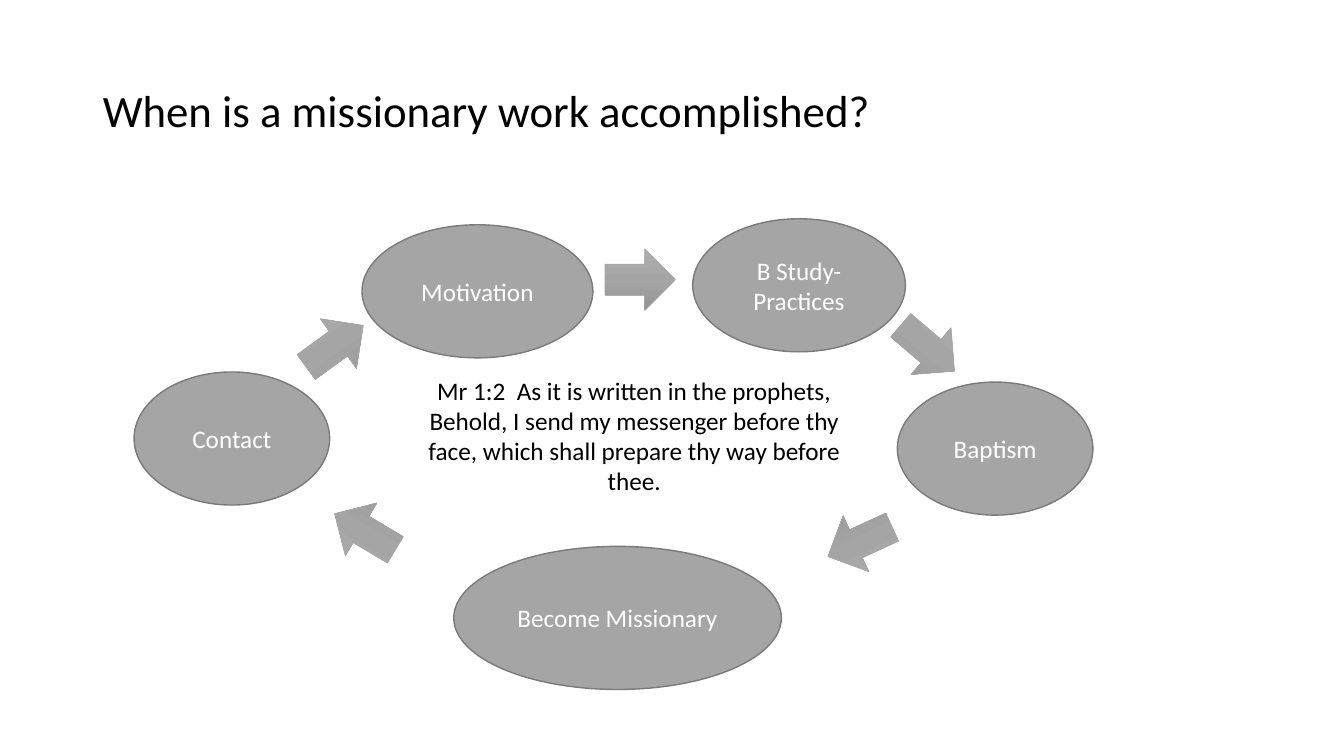
"""Build a slide showing missionary work as a cycle of five stages."""
from copy import deepcopy
from dataclasses import dataclass

from pptx import Presentation
from pptx.dml.color import RGBColor
from pptx.enum.shapes import MSO_SHAPE
from pptx.enum.text import MSO_ANCHOR, MSO_AUTO_SIZE, PP_ALIGN
from pptx.oxml.ns import qn
from pptx.shapes.autoshape import Shape
from pptx.slide import Slide
from pptx.text.text import TextFrame
from pptx.util import Inches, Pt

FONT = "Calibri"
BLACK = RGBColor(0x00, 0x00, 0x00)
WHITE = RGBColor(0xFF, 0xFF, 0xFF)
GREY = RGBColor(0xA5, 0xA5, 0xA5)
OUTLINE = RGBColor(0x7A, 0x7A, 0x7A)
ARROW_STOPS = (
    (0.0, RGBColor(0xAF, 0xAF, 0xAF)),
    (0.5, GREY),
    (1.0, RGBColor(0x93, 0x93, 0x93)),
)
ARROW_WIDTH, ARROW_HEIGHT = 0.7, 0.61
VERSE = (
    "Mr 1:2  As it is written in the prophets, Behold, I send my messenger "
    "before thy face, which shall prepare thy way before thee."
)


@dataclass(frozen=True)
class Stage:
    lines: tuple[str, ...]
    left: float
    top: float
    width: float
    height: float = 1.32


@dataclass(frozen=True)
class Arrow:
    left: float
    top: float
    rotation: float = 0


STAGES = (
    Stage(("Contact",), 1.33, 3.69, 1.94),
    Stage(("Motivation",), 3.59, 2.23, 2.29),
    Stage(("B Study-", "Practices"), 6.87, 2.17, 2.11),
    Stage(("Baptism",), 8.9, 3.79, 1.94),
    Stage(("Become Missionary",), 4.5, 5.42, 3.25, 1.42),
)
ARROWS = (
    Arrow(2.97, 3.13, 323.9),
    Arrow(6, 2.47),
    Arrow(8.85, 3.15, 40.5),
    Arrow(8.18, 5.07, 155.3),
    Arrow(3.27, 4.97, 210.8),
)


def write(frame: TextFrame, lines: tuple[str, ...], size: int, color: RGBColor,
          align: PP_ALIGN = PP_ALIGN.CENTER, spacing: float = 1.0) -> None:
    frame.word_wrap = True
    for index, line in enumerate(lines):
        para = frame.add_paragraph() if index else frame.paragraphs[0]
        para.alignment = align
        para.line_spacing = spacing
        span = para.add_run()
        span.text = line
        span.font.name = FONT
        span.font.size = Pt(size)
        span.font.color.rgb = color


def set_outline(shape: Shape, color: RGBColor, width: float) -> None:
    shape.shadow.inherit = False
    shape.line.color.rgb = color
    shape.line.width = Pt(width)


def add_title(page: Slide) -> None:
    title = page.shapes.title
    title.left, title.top = Inches(0.92), Inches(0.4)
    title.width, title.height = Inches(11.5), Inches(1.45)
    title.text_frame.vertical_anchor = MSO_ANCHOR.MIDDLE
    write(title.text_frame, ("When is a missionary work accomplished?",),
          32, BLACK, PP_ALIGN.LEFT, 0.9)


def add_stage(page: Slide, stage: Stage) -> None:
    oval = page.shapes.add_shape(
        MSO_SHAPE.OVAL, Inches(stage.left), Inches(stage.top),
        Inches(stage.width), Inches(stage.height))
    set_outline(oval, OUTLINE, 1)
    oval.fill.solid()
    oval.fill.fore_color.rgb = GREY
    oval.text_frame.vertical_anchor = MSO_ANCHOR.MIDDLE
    write(oval.text_frame, stage.lines, 18, WHITE)


def add_arrow(page: Slide, arrow: Arrow) -> None:
    shape = page.shapes.add_shape(
        MSO_SHAPE.RIGHT_ARROW, Inches(arrow.left), Inches(arrow.top),
        Inches(ARROW_WIDTH), Inches(ARROW_HEIGHT))
    shape.rotation = arrow.rotation
    set_outline(shape, GREY, 0.5)
    shape.fill.gradient()
    shape.fill.gradient_angle = 270
    stop_list = shape.element.spPr.find(qn("a:gradFill")).find(qn("a:gsLst"))
    stop_list.insert(1, deepcopy(stop_list[0]))
    for stop, (position, color) in zip(shape.fill.gradient_stops, ARROW_STOPS):
        stop.position = position
        stop.color.rgb = color


def add_verse(page: Slide) -> None:
    box = page.shapes.add_textbox(
        Inches(4), Inches(3.67), Inches(4.58), Inches(1.31))
    write(box.text_frame, (VERSE,), 18, BLACK)
    box.text_frame.auto_size = MSO_AUTO_SIZE.SHAPE_TO_FIT_TEXT


def main() -> None:
    deck = Presentation()
    deck.slide_width, deck.slide_height = Inches(13.33), Inches(7.5)
    page = deck.slides.add_slide(deck.slide_layouts.get_by_name("Title Only"))
    add_title(page)
    for stage in STAGES:
        add_stage(page, stage)
    for arrow in ARROWS:
        add_arrow(page, arrow)
    add_verse(page)
    deck.save("out.pptx")


if __name__ == "__main__":
    main()
